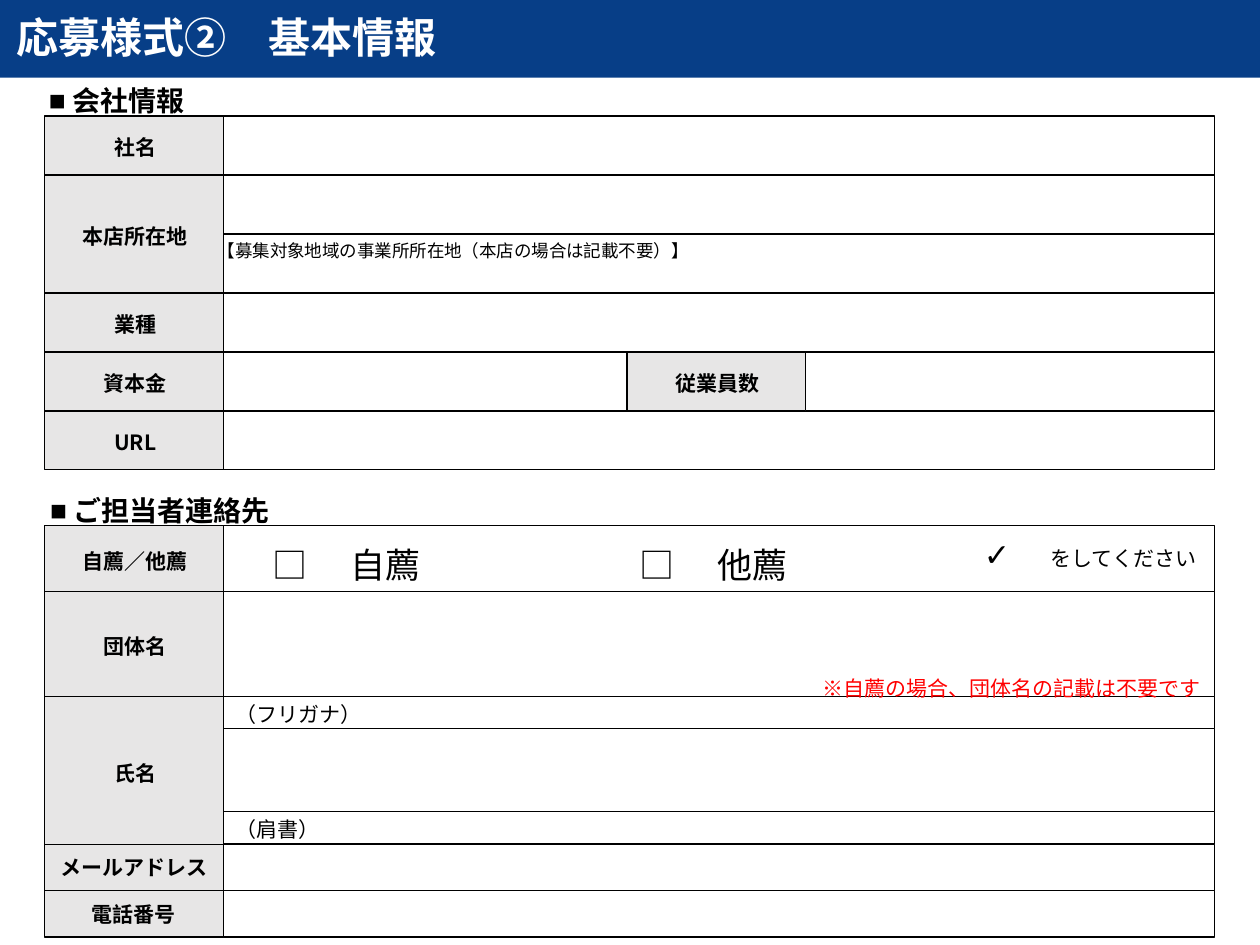
from lxml import etree
from pptx import Presentation
from pptx.dml.color import RGBColor
from pptx.enum import shapes, text
from pptx.oxml.ns import qn
from pptx.util import Pt

HUES = {"bar": "073E87", "label": "E7E6E6", "white": "FFFFFF",
        "ink": "000000", "note": "FF0000"}
CJK = "Noto Sans CJK JP"

# Columns shared by both forms
LEFT, LABEL, FIELD = 25.4, 102.2, 566.6
MID = LEFT + LABEL
# Row edges: even pitch for the company, listed for the contact
FIRM = [66.3 + 33.7 * i for i in range(7)]
DESK = [300.2, 338.2, 398, 416.3, 463.7, 482.4, 509, 535.5]


def hue(key):
    return RGBColor.from_string(HUES[key])


def add_run(para, words, size, face=CJK, key="ink", bold=False):
    run = para.add_run()
    run.text = words
    font = run.font
    font.size, font.name, font.bold = Pt(size), face, bold
    font.color.rgb = hue(key)
    east = etree.Element(qn("a:ea"), typeface=CJK)
    font._element.find(qn("a:latin")).addnext(east)


def add_box(slide, left, top, wide, high, key, line=True):
    box = slide.shapes.add_shape(shapes.MSO_SHAPE.RECTANGLE,
                                 Pt(left), Pt(top), Pt(wide), Pt(high))
    box.shadow.inherit = False
    box.fill.solid()
    box.fill.fore_color.rgb = hue(key)
    if line:
        box.line.color.rgb = hue("ink")
        box.line.width = Pt(0.75)
    else:
        box.line.fill.background()
    return box


def fill_text(box, words, pads, align, bold):
    frame = box.text_frame
    frame.vertical_anchor = text.MSO_ANCHOR.MIDDLE
    (frame.margin_left, frame.margin_top,
     frame.margin_right, frame.margin_bottom) = [Pt(p) for p in pads]
    para = frame.paragraphs[0]
    para.alignment = align
    add_run(para, words, 12, bold=bold)


def add_label(slide, words, top, end, pads, left=LEFT):
    box = add_box(slide, left, top, LABEL, end - top, "label")
    fill_text(box, words, pads, text.PP_ALIGN.CENTER, True)


def add_field(slide, top, end, words="", left=MID, wide=FIELD):
    box = add_box(slide, left, top, wide, end - top, "white")
    if words:
        fill_text(box, words, (7.2, 7.2, 7.2, 5.8), text.PP_ALIGN.LEFT, False)


def add_note(slide, at, runs, size, key="ink", bold=False, ls=None, gap=0):
    box = slide.shapes.add_textbox(*[Pt(v) for v in at])
    frame = box.text_frame
    frame.word_wrap = True
    frame.auto_size = text.MSO_AUTO_SIZE.SHAPE_TO_FIT_TEXT
    para = frame.paragraphs[0]
    para.space_before = para.space_after = Pt(gap)
    if ls:
        para.line_spacing = ls
    for words, face in runs:
        add_run(para, words, size, face, key, bold)
    return para


def add_head(slide, words, at):
    para = add_note(slide, at, [(words, "Arial")], 16, bold=True, gap=2.4)
    props = para._p.get_or_add_pPr()
    props.set("marL", str(Pt(13.5)))
    props.set("indent", str(-Pt(13.5)))
    etree.SubElement(props, qn("a:buFont"), typeface="Arial")
    etree.SubElement(props, qn("a:buChar"), char="■")


def add_title(slide, words):
    bar = add_box(slide, 0, 0, 722.9, 44.4, "bar", line=False)
    title = slide.shapes.title
    bar._element.addnext(title._element)
    title.left, title.top, title.width, title.height = Pt(2.2), Pt(2.2), Pt(640), Pt(41)
    frame = title.text_frame
    frame.vertical_anchor = text.MSO_ANCHOR.MIDDLE
    para = frame.paragraphs[0]
    para.alignment = text.PP_ALIGN.LEFT
    para.line_spacing = 0.9
    add_run(para, words, 24, key="white", bold=True)


def add_firm(slide):
    pads = (8.6, 5.8, 7.2, 3.6)
    split, size = 358.3, 460.3
    for row in (0, 1, 2, 3, 5):
        add_field(slide, FIRM[row], FIRM[row + 1])
    # Capital and staff share a row
    add_field(slide, FIRM[4], FIRM[5], wide=split - MID)
    add_field(slide, FIRM[4], FIRM[5], left=size, wide=MID + FIELD - size)
    add_label(slide, "従業員数", FIRM[4], FIRM[5], pads, split)
    for words, top, end in [("社名", 0, 1), ("本店所在地", 1, 3), ("業種", 3, 4),
                            ("資本金", 4, 5), ("URL", 5, 6)]:
        add_label(slide, words, FIRM[top], FIRM[end], pads)
    add_head(slide, "会社情報", (20.9, 44.4, 120, 26.6))
    add_note(slide, (117.4, 127.8, 343.4, 25.2),
             [("【募集対象地域の", "Arial"),
              ("事業所所在地（本店の場合は記載不要）", "Calibri"),
              ("】", "Arial")], 10, ls=1.5, gap=2.4)


def add_desk(slide):
    fields = ["", "", "（フリガナ）\u3000", "", "（肩書）\u3000", "", ""]
    for words, top, end in zip(fields, DESK, DESK[1:]):
        add_field(slide, top, end, words)
    tall, low = (8.6, 8.6, 7.2, 5.8), (7.2, 5.8, 7.2, 5.8)
    for words, top, end, pads in [
            ("自薦／他薦", 0, 1, tall), ("団体名", 1, 2, tall), ("氏名", 2, 5, tall),
            ("メールアドレス", 5, 6, low), ("電話番号", 6, 7, low)]:
        add_label(slide, words, DESK[top], DESK[end], pads)
    add_head(slide, "ご担当者連絡先", (21.6, 278.6, 170, 26.6))
    # Choices and the remarks beside them
    for words, left in [("自薦", 148.6), ("他薦", 358.6)]:
        add_note(slide, (left, 295.2, 153.4, 43.9),
                 [("□\u3000 " + words, "Arial")], 20, ls=1.5, gap=2.4)
    add_note(slide, (555.1, 302.4, 49, 28.8), [("✓", "Calibri")], 18)
    add_note(slide, (593.3, 308.2, 174.2, 21.6), [("をしてください", "Calibri")], 12)
    add_note(slide, (463, 375.1, 237.6, 27.4),
             [("※自薦の場合、団体名の記載は不要です", "Arial")], 12, "note", ls=1.5, gap=2.4)


def main():
    deck = Presentation()
    deck.slide_width, deck.slide_height = Pt(720), Pt(540)
    slide = deck.slides.add_slide(deck.slide_layouts[5])
    add_title(slide, "応募様式②\u3000基本情報")
    add_firm(slide)
    add_desk(slide)
    deck.save("out.pptx")


if __name__ == "__main__":
    main()
